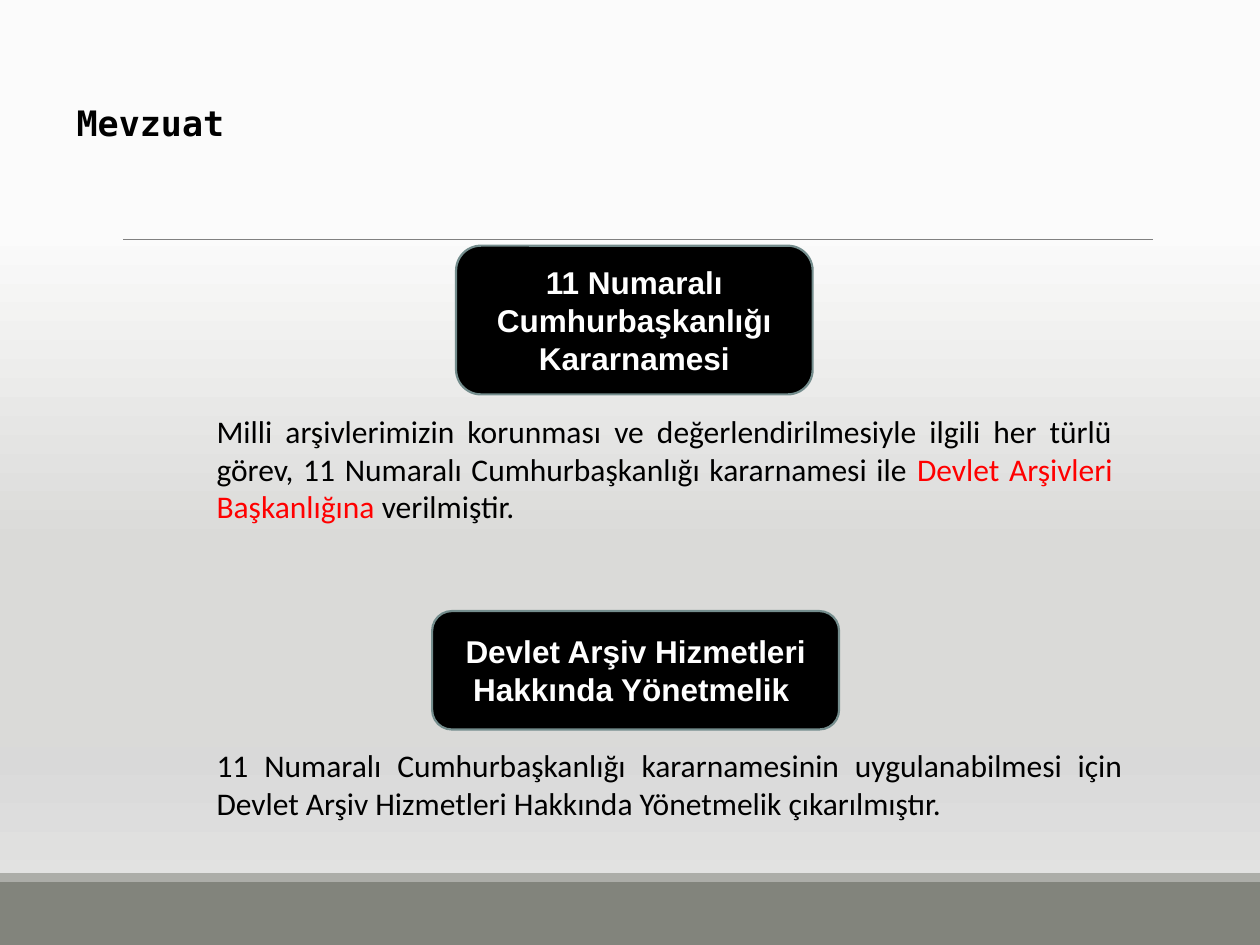
from lxml.etree import SubElement
from pptx import Presentation
from pptx.dml.color import RGBColor
from pptx.enum.shapes import MSO_CONNECTOR as CONN, MSO_SHAPE as SHAPE
from pptx.enum.text import MSO_ANCHOR as ANCHOR, PP_ALIGN as ALIGN
from pptx.oxml.ns import qn
from pptx.util import Inches, Pt

BLACK = RGBColor(0x00, 0x00, 0x00)
WHITE = RGBColor(0xFF, 0xFF, 0xFF)
RED = RGBColor(0xFF, 0x00, 0x00)
OUTLINE = RGBColor(0x74, 0x8D, 0x8D)
RULE = RGBColor(0x80, 0x80, 0x80)
BAND = RGBColor(0x82, 0x84, 0x7C)
BAND_EDGE = RGBColor(0xAC, 0xAD, 0xA8)
BACKGROUND_STOPS = [
    (24, RGBColor(0xFB, 0xFB, 0xFB)),
    (58, RGBColor(0xDA, 0xDA, 0xD8)),
    (79, RGBColor(0xD9, 0xD9, 0xD9)),
    (100, RGBColor(0xE6, 0xE6, 0xE5)),
]

TITLE_FONT = dict(name="DejaVu Sans Mono", size=Pt(20), bold=True)
HEADING_FONT = dict(name="Arial", size=Pt(18), bold=True)
BODY_FONT = dict(name="Calibri", size=Pt(18))

# heading, heading box, body runs, body box
SECTIONS = [
    ("11 Numaralı\vCumhurbaşkanlığı Kararnamesi", (3.62, 1.95, 2.83, 1.18),
     [("Milli arşivlerimizin korunması ve değerlendirilmesiyle ilgili her "
       "türlü görev, 11 Numaralı Cumhurbaşkanlığı kararnamesi ile ", BLACK),
      ("Devlet Arşivleri Başkanlığına ", RED),
      ("verilmiştir.", BLACK)],
     (1.62, 3.22, 7.31, 1.63)),
    ("Devlet Arşiv Hizmetleri Hakkında Yönetmelik ", (3.43, 4.85, 3.23, 0.94),
     [("11 Numaralı Cumhurbaşkanlığı kararnamesinin uygulanabilmesi için "
       "Devlet Arşiv Hizmetleri Hakkında Yönetmelik çıkarılmıştır.", BLACK)],
     (1.62, 5.87, 7.39, 1.06)),
]


def inches(box):
    return [Inches(v) for v in box]


def format_run(r, font, color):
    for name, value in font.items():
        setattr(r.font, name, value)
    r.font.color.rgb = color


def paint_background(slide):
    fill = slide.background.fill
    fill.gradient()
    fill.gradient_angle = 270
    stops = slide.element.find(".//" + qn("a:gsLst"))
    for stop in list(stops):
        stops.remove(stop)
    for percent, color in BACKGROUND_STOPS:
        stop = SubElement(stops, qn("a:gs"), pos=str(percent * 1000))
        SubElement(stop, qn("a:srgbClr"), val=str(color))


def add_filled(slide, shape, box, color):
    sp = slide.shapes.add_shape(shape, *inches(box))
    sp.shadow.inherit = False
    sp.fill.solid()
    sp.fill.fore_color.rgb = color
    sp.line.fill.background()
    return sp


def add_frame(slide):
    """Footer bands and the rule under the title."""
    add_filled(slide, SHAPE.RECTANGLE, (0, 7, 10, 0.5), BAND)
    add_filled(slide, SHAPE.RECTANGLE, (0, 6.93, 10, 0.07), BAND_EDGE)
    rule = slide.shapes.add_connector(
        CONN.STRAIGHT, *inches((0.98, 1.9, 9.15, 1.9)))
    rule.line.color.rgb = RULE
    rule.line.width = Pt(0.5)
    SubElement(rule.element.spPr, qn("a:effectLst"))


def add_text(slide, box, runs, font, align):
    tf = slide.shapes.add_textbox(*inches(box)).text_frame
    tf.word_wrap = True
    p = tf.paragraphs[0]
    p.alignment = align
    for text, color in runs:
        r = p.add_run()
        r.text = text
        format_run(r, font, color)


def add_heading(slide, box, text):
    sp = add_filled(slide, SHAPE.ROUNDED_RECTANGLE, box, BLACK)
    sp.line.color.rgb = OUTLINE
    sp.line.width = Pt(1.25)
    tf = sp.text_frame
    tf.word_wrap = True
    tf.vertical_anchor = ANCHOR.MIDDLE
    p = tf.paragraphs[0]
    p.text = text
    p.alignment = ALIGN.CENTER
    for r in p.runs:
        format_run(r, HEADING_FONT, WHITE)


def main():
    prs = Presentation()
    prs.slide_width, prs.slide_height = Inches(10), Inches(7.5)
    slide = prs.slides.add_slide(prs.slide_layouts[6])
    paint_background(slide)
    add_frame(slide)
    add_text(slide, (0.51, 0.76, 5.67, 0.44), [("Mevzuat", BLACK)],
             TITLE_FONT, ALIGN.LEFT)
    for heading, heading_box, body, body_box in SECTIONS:
        add_heading(slide, heading_box, heading)
        add_text(slide, body_box, body, BODY_FONT, ALIGN.JUSTIFY)
    prs.save("out.pptx")


if __name__ == "__main__":
    main()
